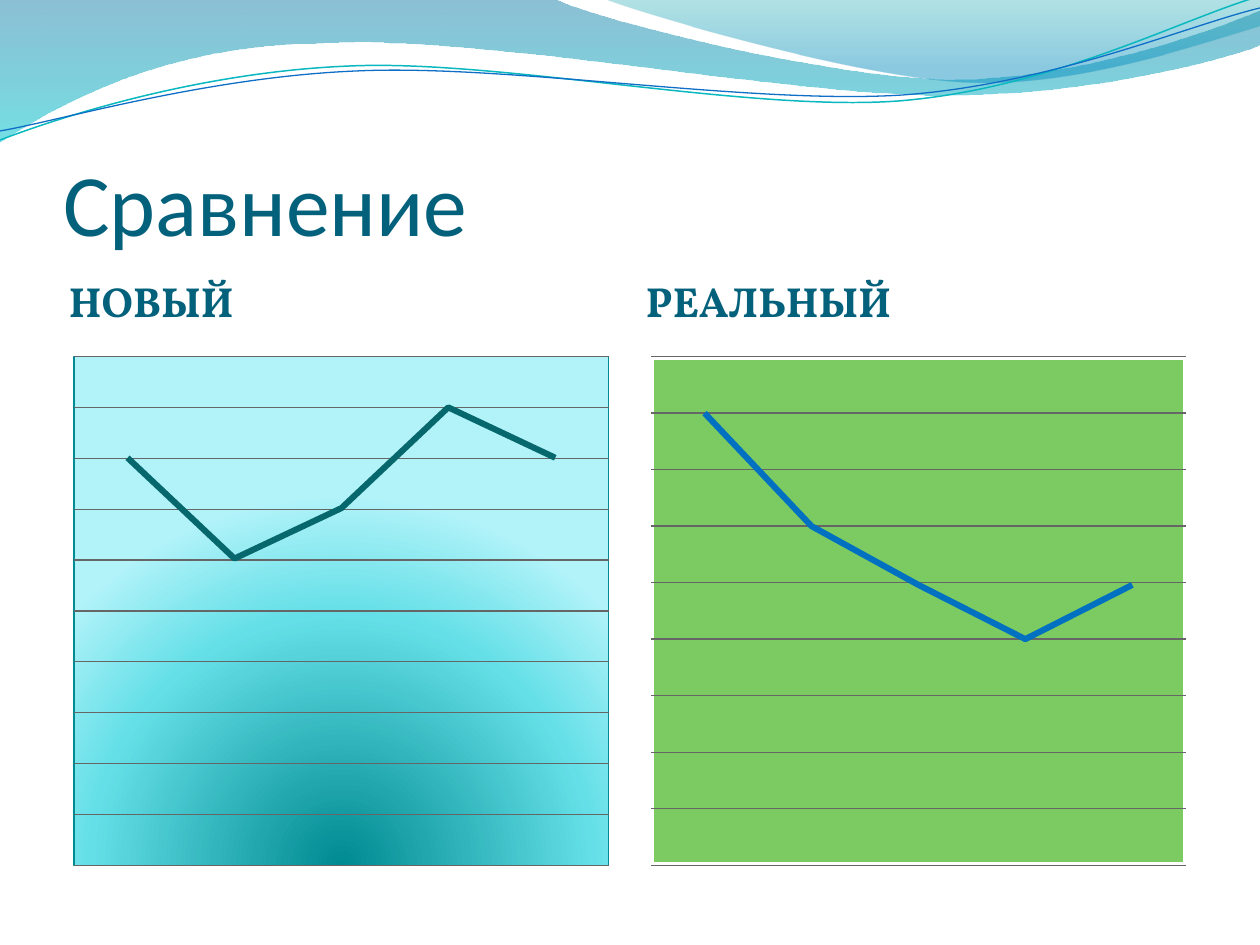
from lxml import etree
from pptx import Presentation
from pptx import util as u
from pptx.chart import data
from pptx.dml.color import RGBColor
from pptx.enum import chart as ch, text
from pptx.oxml.ns import qn

PX = 914400 / 126
WIDE, HIGH = 1260, 945
HUES = {
    "title": "04617B", "grid": "666666", "white": "FFFFFF", "black": "000000",
    "wave": "0AB8BF", "blue": "0F6FC6", "teal": "06686C", "azure": "0070C0",
    "green": "7CCA62", "edge": "008A91",
}
NS = ('xmlns:a="http://schemas.openxmlformats.org/drawingml/2006/main" '
      'xmlns:c="http://schemas.openxmlformats.org/drawingml/2006/chart"')

# Each curve: a start point, then runs of 2 (line) or 6 (cubic) numbers
BAND = [(0, -1), (554, -1), (600, 21, 837, 79, 955, 79),
        (1075, 79, 1207, 33, 1260, 11), (1261, 45),
        (1239, 55, 1096, 96, 940, 95), (784, 95, 481, 35, 324, 43),
        (163, 44, 58, 105, -1, 142)]
CREST = [(604, -1), (641, 14, 859, 78, 969, 82),
         (1079, 87, 1211, 40, 1260, 26), (1260, 0)]
UPPER = [(0, 140), (60, 117, 199, 72, 349, 66),
         (498, 59, 747, 112, 898, 101), (1050, 89, 1182, 19, 1257, -3)]
LOWER = [(0, 131), (59, 121, 207, 77, 357, 71),
         (508, 64, 752, 105, 903, 95), (1053, 84, 1186, 26, 1260, 8)]


def px(*nums):
    return [u.Emu(round(n * PX)) for n in nums]


def rgb(name):
    return RGBColor.from_string(HUES[name])


def grad(stops, way):
    """Gradient fill from (position, colour, opacity) stops."""
    marks = "".join(
        f'<a:gs pos="{pos * 1000}"><a:srgbClr val="{hue}">'
        f'<a:alpha val="{alpha * 1000}"/></a:srgbClr></a:gs>'
        for pos, hue, alpha in stops)
    return f'<a:gradFill {NS}><a:gsLst>{marks}</a:gsLst>{way}</a:gradFill>'


def outline(slide, curve, close):
    first, *rest = curve
    pen = slide.shapes.build_freeform(*px(*first), scale=1.0)
    pen.add_line_segments([px(*seg[-2:]) for seg in rest], close=close)
    shape = pen.convert_to_shape()
    shape.shadow.inherit = False
    # Bend the straight runs that have control points
    runs = list(shape.element.iter(qn("a:lnTo")))
    for run, seg in zip(runs, rest):
        if len(seg) == 6:
            nums = px(*seg)
            dots = "".join(
                f'<a:pt x="{x - shape.left}" y="{y - shape.top}"/>'
                for x, y in zip(nums[::2], nums[1::2]))
            bend = f'<a:cubicBezTo {NS}>{dots}</a:cubicBezTo>'
            run.getparent().replace(run, etree.fromstring(bend))
    return shape


def waves(slide):
    # Tinted bands
    for curve, stops in (
            (BAND, [(0, "0074A1", 45), (100, "00C6CF", 55)]),
            (CREST, [(0, "00A1A9", 30), (80, "008BBF", 45)])):
        shape = outline(slide, curve, True)
        shape.line.fill.background()
        shape.fill.solid()
        old = shape.element.spPr.find(qn("a:solidFill"))
        new = grad(stops, '<a:lin ang="5400000" scaled="0"/>')
        old.getparent().replace(old, etree.fromstring(new))
    # Thin lines
    for curve, hue, size in ((UPPER, "wave", 0.85), (LOWER, "blue", 0.75)):
        shape = outline(slide, curve, False)
        shape.fill.background()
        shape.line.color.rgb = rgb(hue)
        shape.line.width = u.Pt(size)


def write(frame, words, font, size, anchor, pads, bold=False):
    frame.text = words
    frame.word_wrap = True
    frame.auto_size = text.MSO_AUTO_SIZE.NONE
    frame.vertical_anchor = anchor
    (frame.margin_left, frame.margin_top,
     frame.margin_right, frame.margin_bottom) = px(*pads)
    para = frame.paragraphs[0]
    para.alignment = text.PP_ALIGN.LEFT
    run = para.runs[0].font
    run.name, run.size, run.bold = font, u.Pt(size), bold
    run.color.rgb = rgb("title")


def heading(slide, box):
    title = slide.shapes.title
    title.left, title.top, title.width, title.height = px(*box)
    write(title.text_frame, "Сравнение", "Calibri", 50,
          text.MSO_ANCHOR.BOTTOM, (0, 6, 0, 0))
    slide.shapes.element.append(title.element)  # in front of the waves


def graph(slide, box, vals, step, count, hue, fill, edge, width):
    info = data.CategoryChartData()
    info.categories = ["1", "2", "3", "4", "5"]
    info.add_series("Series 1", vals)
    chart = slide.shapes.add_chart(
        ch.XL_CHART_TYPE.LINE_STACKED, *px(*box), info).chart
    chart.has_legend = chart.has_title = False
    chart.font.name, chart.font.size = "Vollkorn", u.Pt(18)
    chart.font.color.rgb = rgb("black")
    # Axes and grid
    chart.category_axis.visible = False
    axis = chart.value_axis
    axis.visible = False
    axis.minimum_scale, axis.major_unit = 0, step
    axis.maximum_scale = round(step * count, 2)
    axis.has_major_gridlines = True
    rule = axis.major_gridlines.format.line
    rule.color.rgb, rule.width = rgb("grid"), u.Pt(0.75)
    # Series
    plot = chart.plots[0]
    plot.vary_by_categories = False
    line = plot.series[0]
    line.smooth = False
    line.format.line.color.rgb = rgb(hue)
    line.format.line.width = u.Pt(3.5)
    # Plot area: inner box, fill and border
    area = chart.element.find(".//" + qn("c:plotArea"))
    for old in area.findall(qn("c:layout")):
        area.remove(old)
    spots = "".join(f'<c:{tag} val="{val}"/>' for tag, val in (
        ("layoutTarget", "inner"), ("xMode", "edge"), ("yMode", "edge"),
        ("x", 0.02), ("y", 0.02), ("w", 0.96), ("h", 0.96)))
    area.insert(0, etree.fromstring(
        f'<c:layout {NS}><c:manualLayout>{spots}</c:manualLayout></c:layout>'))
    area.append(etree.fromstring(
        f'<c:spPr {NS}>{fill}<a:ln w="{u.Pt(width)}"><a:solidFill>'
        f'<a:srgbClr val="{HUES[edge]}"/></a:solidFill></a:ln></c:spPr>'))


def panel(slide, box, label, **look):
    left, top, wide, high = box
    head = 91
    name = slide.shapes.add_textbox(*px(left, top, wide, head))
    write(name.text_frame, label, "Vollkorn", 24,
          text.MSO_ANCHOR.MIDDLE, (6, 0, 6, 0), True)
    graph(slide, (left, top + head, wide, high - head), **look)


def main():
    deck = Presentation()
    deck.slide_width, deck.slide_height = px(WIDE, HIGH)
    slide = deck.slides.add_slide(deck.slide_layouts[5])
    waves(slide)
    heading(slide, (63, 97, 1134, 157))
    glow = grad([(0, "008A91", 100), (68, "64DFE7", 100), (100, "B1F3F9", 100)],
                '<a:path path="circle"><a:fillToRect l="50000" t="130000" '
                'r="50000" b="-30000"/></a:path>')
    flat = f'<a:solidFill><a:srgbClr val="{HUES["green"]}"/></a:solidFill>'
    panel(slide, (63, 255, 557, 621), "НОВЫЙ", vals=(89, 67, 78, 100, 89),
          step=11.11, count=10, hue="teal", fill=glow, edge="edge", width=0.75)
    panel(slide, (640, 255, 557, 621), "РЕАЛЬНЫЙ", vals=(100, 75, 62, 50, 62),
          step=12.5, count=9, hue="azure", fill=flat, edge="white", width=3.5)
    deck.save("out.pptx")


if __name__ == "__main__":
    main()
